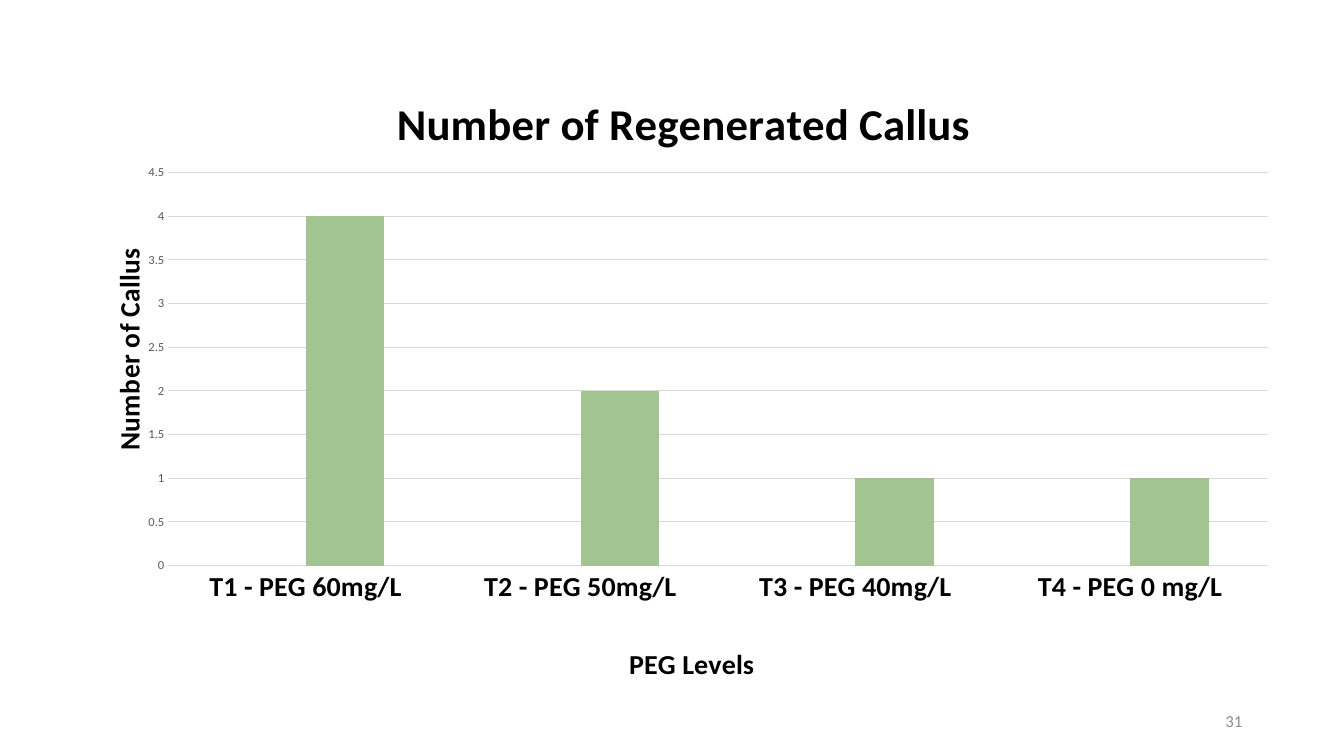
from lxml import etree
from pptx import Presentation
from pptx.chart.data import CategoryChartData
from pptx.dml.color import RGBColor
from pptx.enum.chart import XL_CHART_TYPE as ChartType, XL_TICK_MARK as Tick
from pptx.enum.text import MSO_ANCHOR, PP_ALIGN
from pptx.oxml.ns import qn
from pptx.util import Inches, Pt

FONT = "Calibri"
COLORS = {"text": "000000", "tick": "595959", "grid": "D9D9D9", "number": "8C8C8C",
          "series 1": "639A3F", "series 2": "A1C490"}


def rgb(name):
    return RGBColor.from_string(COLORS[name])


def style_font(font, size, color="text", bold=False):
    font.name, font.size, font.bold = FONT, Pt(size), bold
    font.color.rgb = rgb(color)


def place(parent, **fractions):
    layout = parent.find(qn("c:layout"))
    if layout is None:
        layout = etree.Element(qn("c:layout"))
        tx = parent.find(qn("c:tx"))
        if tx is None:
            parent.insert(0, layout)
        else:
            tx.addnext(layout)
    for child in list(layout):
        layout.remove(child)
    manual = etree.SubElement(layout, qn("c:manualLayout"))
    if "w" in fractions:
        etree.SubElement(manual, qn("c:layoutTarget")).set("val", "inner")
    for side in ("x", "y"):
        etree.SubElement(manual, qn(f"c:{side}Mode")).set("val", "edge")
    for side, value in fractions.items():
        etree.SubElement(manual, qn(f"c:{side}")).set("val", str(value))


def add_title(title, text, size, x, y):
    p = title.text_frame.paragraphs[0]
    p.text = text
    style_font(p.font, size, bold=True)
    place(title._element, x=x, y=y)


def style_axis(axis, size, color, bold=False):
    axis.major_tick_mark = axis.minor_tick_mark = Tick.NONE
    axis.format.line.fill.background()
    style_font(axis.tick_labels.font, size, color, bold)


def add_callus_chart(s, left, top, width, height):
    data = CategoryChartData()
    data.categories = ["T1 - PEG 60mg/L", "T2 - PEG 50mg/L",
                       "T3 - PEG 40mg/L", "T4 - PEG 0 mg/L"]
    data.add_series("Series 1", [None] * 4)
    data.add_series("Series 2", [4, 2, 1, 1])
    chart = s.shapes.add_chart(ChartType.COLUMN_CLUSTERED, Inches(left), Inches(top),
                               Inches(width), Inches(height), data).chart
    style_font(chart.font, 10)
    chart.has_legend = False

    plot = chart.plots[0]
    plot.gap_width, plot.overlap, plot.vary_by_categories = 150, 0, False
    for series in plot.series:
        series.format.fill.solid()
        series.format.fill.fore_color.rgb = rgb(series.name.lower())

    levels, counts = chart.category_axis, chart.value_axis
    style_axis(levels, 20, "text", bold=True)
    style_axis(counts, 9, "tick")
    counts.minimum_scale, counts.maximum_scale, counts.major_unit = 0, 4.5, 0.5
    counts.tick_labels.number_format = "General"
    counts.tick_labels.number_format_is_linked = False
    counts.has_major_gridlines = True
    counts.major_gridlines.format.line.color.rgb = rgb("grid")
    counts.major_gridlines.format.line.width = Pt(0.75)

    add_title(chart.chart_title, "Number of Regenerated Callus", 32, 0.27, 0.05)
    add_title(levels.axis_title, "PEG Levels", 20, 0.46, 0.94)
    add_title(counts.axis_title, "Number of Callus", 20, 0.04, 0.31)
    place(chart._chartSpace.chart.plotArea, x=0.092, y=0.19, w=0.888, h=0.632)


def add_slide_number(s, left, top, width, height, number):
    box = s.shapes.add_textbox(Inches(left), Inches(top), Inches(width), Inches(height))
    tf = box.text_frame
    tf.word_wrap = True
    tf.vertical_anchor = MSO_ANCHOR.MIDDLE
    p = tf.paragraphs[0]
    p.text = str(number)
    p.alignment = PP_ALIGN.RIGHT
    style_font(p.font, 12, "number")


def main():
    prs = Presentation()
    prs.slide_width, prs.slide_height = Inches(13.33), Inches(7.5)
    s = prs.slides.add_slide(prs.slide_layouts[6])
    add_slide_number(s, 9.42, 6.95, 3, 0.4, 31)
    add_callus_chart(s, 0.54, 0.54, 12.28, 6.3)
    prs.save("out.pptx")


if __name__ == "__main__":
    main()
